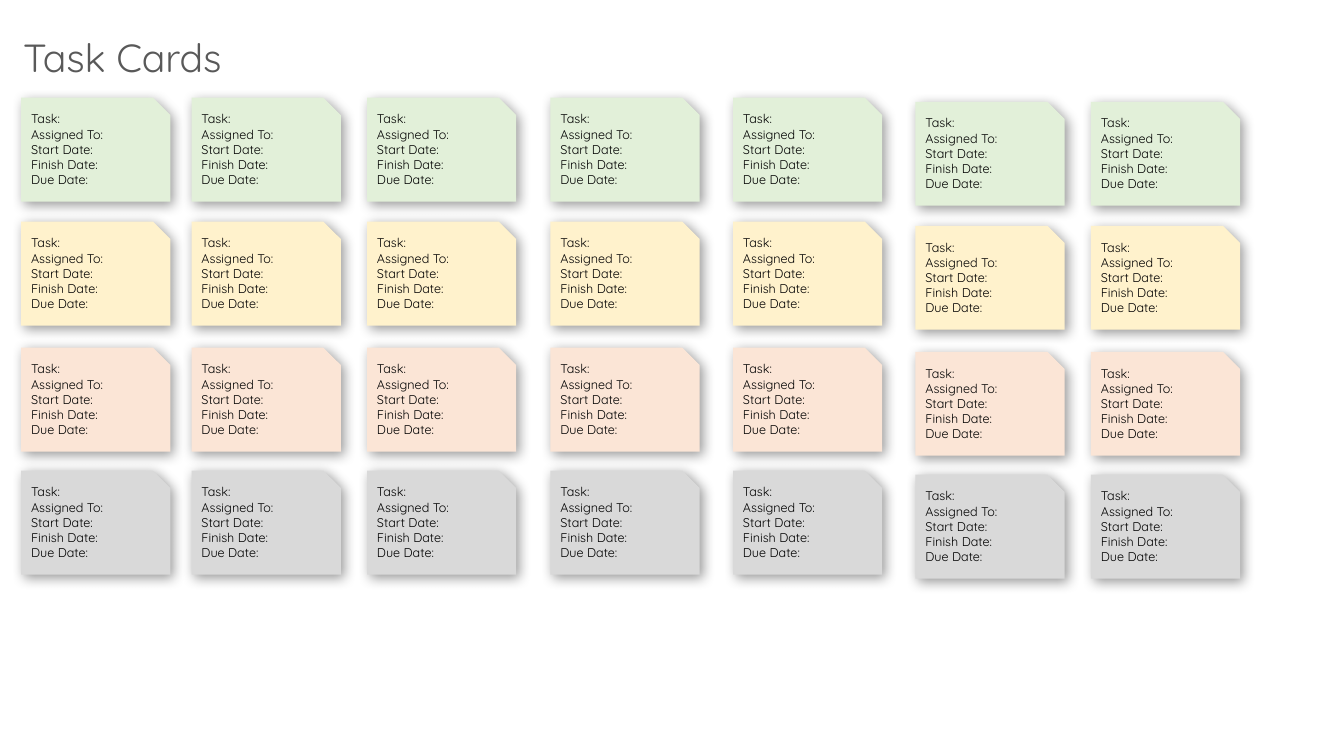
"""Builds a slide of colour-coded task cards."""
from lxml.etree import SubElement
from pptx import Presentation
from pptx.dml.color import RGBColor
from pptx.enum.shapes import MSO_SHAPE as Shape
from pptx.enum.text import MSO_ANCHOR as Anchor, MSO_AUTO_SIZE as AutoSize, PP_ALIGN as Align
from pptx.oxml.ns import qn
from pptx.util import Inches, Pt

FONT = "Quicksand"
COLORS = {
    "title": "595959",
    "ink": "000000",
    "shadow": "000000",
    "green": "E2F0D9",
    "yellow": "FFF2CC",
    "orange": "FBE5D6",
    "gray": "D9D9D9",
}
FIELDS = ["Task:", "Assigned To:", "Start Date:", "Finish Date:", "Due Date:"]
ROW_TOPS = {"green": 0, "yellow": 1.23, "orange": 2.48, "gray": 3.7}
COLUMNS = [(0, 0), (1.69, 0), (3.43, 0), (5.25, 0), (7.06, 0), (8.87, 0.04), (10.61, 0.04)]
CARD_WIDTH, CARD_HEIGHT = 1.48, 1.03


def add_line(paragraph, text, size, color):
    """Add one left-aligned run of text to a paragraph."""
    paragraph.alignment = Align.LEFT
    run = paragraph.add_run()
    run.text = text
    run.font.name = FONT
    run.font.size = Pt(size)
    run.font.color.rgb = RGBColor.from_string(COLORS[color])


def add_shadow(card):
    """Give a card a soft shadow towards the lower right."""
    card.shadow.inherit = False
    effects = card.element.spPr.find(qn("a:effectLst"))
    shadow = SubElement(effects, qn("a:outerShdw"), blurRad=str(Pt(9)), dist=str(Pt(3)),
                        dir=str(45 * 60000), algn="tl", rotWithShape="0")
    color = SubElement(shadow, qn("a:srgbClr"), val=COLORS["shadow"])
    SubElement(color, qn("a:alpha"), val="40000")


def add_title(slide, left, top, width, height):
    """Add the slide title in the given box."""
    title = slide.shapes.add_textbox(Inches(left), Inches(top), Inches(width), Inches(height))
    frame = title.text_frame
    frame.word_wrap = True
    frame.auto_size = AutoSize.SHAPE_TO_FIT_TEXT
    add_line(frame.paragraphs[0], "Task Cards", 28, "title")


def add_card(slide, left, top, width, height, color):
    """Add one snipped task card with its field labels."""
    card = slide.shapes.add_shape(Shape.SNIP_1_RECTANGLE, Inches(left), Inches(top),
                                  Inches(width), Inches(height))
    card.fill.solid()
    card.fill.fore_color.rgb = RGBColor.from_string(COLORS[color])
    card.line.fill.background()
    add_shadow(card)
    frame = card.text_frame
    frame.word_wrap = True
    frame.vertical_anchor = Anchor.TOP
    for index, field in enumerate(FIELDS):
        paragraph = frame.add_paragraph() if index else frame.paragraphs[0]
        add_line(paragraph, field, 9, "ink")


def add_card_grid(slide, left, top):
    """Add the columns of cards, one colour per row."""
    for column_left, drop in COLUMNS:
        for color, row_top in ROW_TOPS.items():
            add_card(slide, left + column_left, top + row_top + drop,
                     CARD_WIDTH, CARD_HEIGHT, color)


def main():
    """Build and save the presentation."""
    deck = Presentation()
    deck.slide_width, deck.slide_height = Inches(13.33), Inches(7.5)
    slide = deck.slides.add_slide(deck.slide_layouts[6])
    add_title(slide, 0.13, 0.28, 8.08, 0.57)
    add_card_grid(slide, 0.21, 0.97)
    deck.save("out.pptx")


if __name__ == "__main__":
    main()
